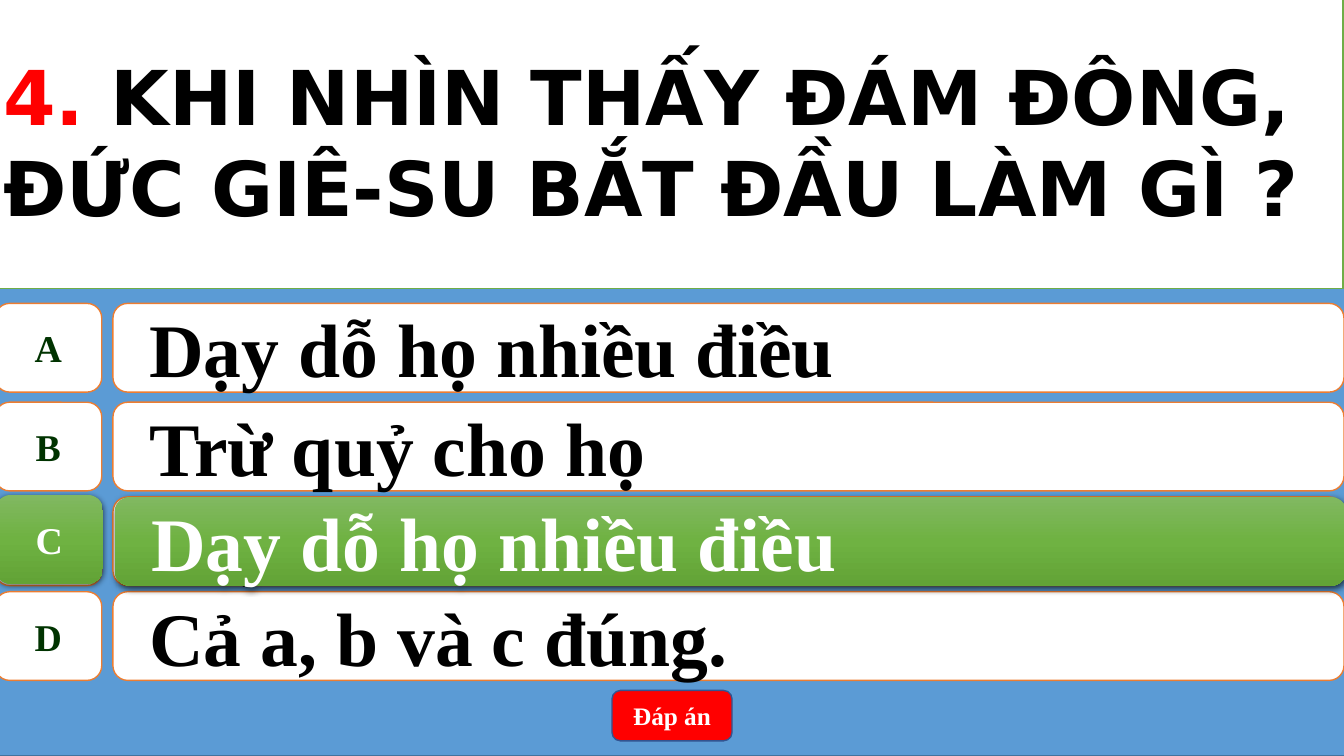
from copy import deepcopy

from lxml import etree
from pptx import Presentation
from pptx.dml.color import RGBColor
from pptx.enum import shapes, text
from pptx.oxml import ns
from pptx.util import Inches, Pt

COLORS = {
    "blue": "5B9BD5", "blue edge": "43739E", "white": "FFFFFF", "black": "000000",
    "orange": "ED7D31", "dark green": "003300", "green": "70AD47",
    "red": "FF0000", "button edge": "325491",
}
HIGHLIGHT = [(0, "81B861"), (0.5, "6FB242"), (1, "62A336")]
SERIF = "Times New Roman"
ROUNDED = shapes.MSO_SHAPE.ROUNDED_RECTANGLE


def add_box(parent, kind, box, fill, line, label="", size=18, color="white"):
    shape = parent.add_shape(kind, *[Inches(value) for value in box])
    shape.shadow.inherit = False
    if fill:
        shape.fill.solid()
        shape.fill.fore_color.rgb = RGBColor.from_string(COLORS[fill])
        shape.line.color.rgb = RGBColor.from_string(COLORS[line])
        shape.line.width = Pt(1)
    else:
        highlight(shape)
    if label:
        shape.text_frame.text = label
        paragraph = shape.text_frame.paragraphs[0]
        paragraph.alignment = text.PP_ALIGN.CENTER
        paragraph.font.name, paragraph.font.size, paragraph.font.bold = SERIF, Pt(size), True
        paragraph.font.color.rgb = RGBColor.from_string(COLORS[color])
    return shape


def highlight(shape):
    """Green gradient without outline, with a soft shadow below."""
    shape.line.fill.background()
    shape.fill.gradient()
    shape.fill.gradient_angle = 270
    properties = shape._element.spPr
    stops = properties.find(".//" + ns.qn("a:gsLst"))
    stops.append(deepcopy(stops[0]))
    for stop, (position, color) in zip(shape.fill.gradient_stops, HIGHLIGHT):
        stop.position = position
        stop.color.rgb = RGBColor.from_string(color)
    effects = properties.find(ns.qn("a:effectLst"))
    shadow = etree.SubElement(effects, ns.qn("a:outerShdw"), blurRad=str(Pt(4.5)),
                              dist=str(Pt(1.5)), dir="5400000", algn="ctr", rotWithShape="0")
    shade = etree.SubElement(shadow, ns.qn("a:srgbClr"), val=COLORS["black"])
    etree.SubElement(shade, ns.qn("a:alpha"), val="63000")


presentation = Presentation()
presentation.slide_width, presentation.slide_height = Inches(13.33), Inches(7.5)
slide = presentation.slides.add_slide(presentation.slide_layouts[5])

# Blue backdrop
add_box(slide.shapes, shapes.MSO_SHAPE.RECTANGLE, (-0.05, 0, 13.39, 7.5), "blue", "blue edge")

# Answers, then the highlighted correct one: letter, answer, left and top of both boxes
answers = [
    ("A", "Dạy dỗ họ nhiều điều", -0.05, 3.01, 1.12, 3.01),
    ("B", "Trừ quỷ cho họ", -0.05, 3.99, 1.12, 3.99),
    ("C", "Dạy dỗ họ nhiều điều", -0.05, 4.93, 1.12, 4.93),
    ("D", "Cả a, b và c đúng.", -0.05, 5.87, 1.12, 5.87),
    ("C", "Dạy dỗ họ nhiều điều", -0.04, 4.91, 1.14, 4.93),
]
for number, (letter, answer, letter_left, letter_top, left, top) in enumerate(answers):
    correct = number == 4
    fill = None if correct else "white"
    group = slide.shapes.add_group_shape().shapes
    letter_box = add_box(group, shapes.MSO_SHAPE.FLOWCHART_ALTERNATE_PROCESS,
                         (letter_left, letter_top, 1.06, 0.88), fill, "orange",
                         letter, 27, "white" if correct else "dark green")
    letter_box.text_frame.word_wrap = False
    answer_box = add_box(group, ROUNDED, (left, top, 12.21, 0.88), fill, "orange",
                         answer, 54, "white" if correct else "black")
    paragraph = answer_box.text_frame.paragraphs[0]
    paragraph.alignment = text.PP_ALIGN.LEFT
    paragraph.level = 1
    indents = paragraph._p.get_or_add_pPr()
    indents.set("marL", str(Inches(0.5)))
    indents.set("indent", str(Inches(-0.28)))

# Answer button
add_box(slide.shapes, ROUNDED, (6.07, 6.85, 1.19, 0.5), "red", "button edge", "Đáp án")

# Question, in front of the backdrop
title = slide.shapes.title
slide.shapes._spTree.append(title._element)
title.left, title.top = Inches(-0.07), Inches(-0.07)
title.width, title.height = Inches(13.39), Inches(2.93)
title.fill.solid()
title.fill.fore_color.rgb = RGBColor.from_string(COLORS["white"])
title.line.color.rgb = RGBColor.from_string(COLORS["green"])
title.line.width = Pt(1)
frame = title.text_frame
frame.word_wrap = True
frame.auto_size = text.MSO_AUTO_SIZE.NONE
frame.vertical_anchor = text.MSO_ANCHOR.MIDDLE
question = [
    [("4. ", "red"), ("KHI NHÌN THẤY ĐÁM ĐÔNG,", "black")],
    [("ĐỨC GIÊ-SU BẮT ĐẦU LÀM GÌ ?", "black")],
]
for number, parts in enumerate(question):
    paragraph = frame.add_paragraph() if number else frame.paragraphs[0]
    paragraph.alignment = text.PP_ALIGN.JUSTIFY
    paragraph.font.name, paragraph.font.size, paragraph.font.bold = "DejaVu Sans", Pt(54), True
    for words, color in parts:
        run = paragraph.add_run()
        run.text = words
        run.font.color.rgb = RGBColor.from_string(COLORS[color])

presentation.save("out.pptx")
